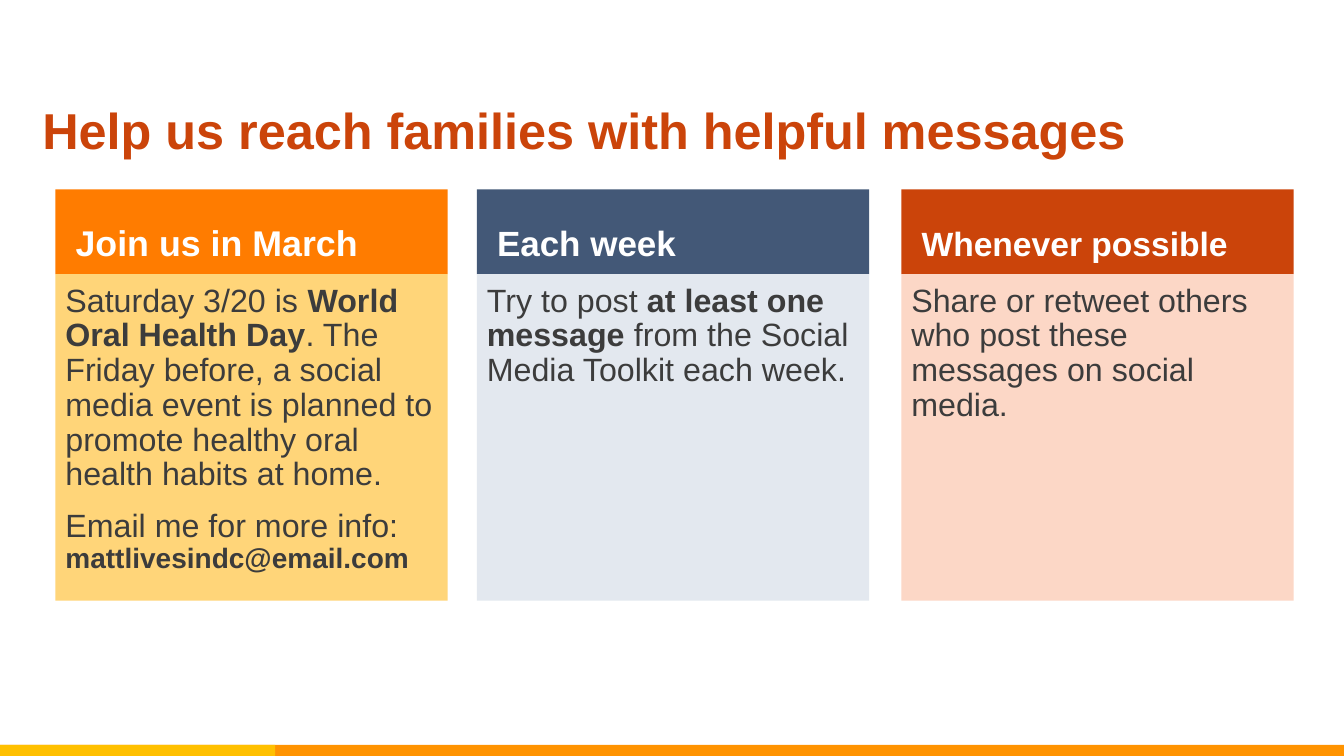
from pptx import Presentation
from pptx import util as u
from pptx.dml.color import RGBColor
from pptx.enum import shapes, text

PX = 9144
PAGE_WIDTH, PAGE_HEIGHT = 1333, 750
CARD_TOP, CARD_WIDTH, CARD_HEIGHT, HEADER_HEIGHT = 188, 389, 408, 84
RUST, WHITE, CHARCOAL = "CB440A", "FFFFFF", "3C3C3C"

CARDS = [
    (55, "Join us in March", 25.5, "FF7C00", "FFD579", [
        [("Saturday 3/20 is ", False, 23), ("World Oral Health Day", True, 23),
         (". The Friday before, a social media event is planned to promote "
          "healthy oral health habits at home.", False, 23)],
        [("Email me for more info: ", False, 23),
         ("mattlivesindc@email.com", True, 20)],
    ]),
    (473, "Each week", 25, "435877", "E3E8EF", [
        [("Try to post ", False, 23), ("at least one message", True, 23),
         (" from the Social Media Toolkit each week.", False, 23)],
    ]),
    (894, "Whenever possible", 24, RUST, "FCD7C6", [
        [("Share or retweet others who post these messages on social media.",
          False, 23)],
    ]),
]


def color(value):
    """Turn a hex string into a colour."""
    return RGBColor.from_string(value)


def add_block(page, left, top, width, height, fill):
    """Add a plain filled rectangle."""
    block = page.shapes.add_shape(
        shapes.MSO_SHAPE.RECTANGLE, left * PX, top * PX, width * PX, height * PX)
    block.shadow.inherit = False
    block.fill.solid()
    block.fill.fore_color.rgb = color(fill)
    block.line.fill.background()
    return block


def write(box, paragraphs, ink, insets, anchor):
    """Fill a box with paragraphs of (text, bold, size) spans."""
    frame = box.text_frame
    frame.word_wrap = True
    frame.vertical_anchor = anchor
    (frame.margin_left, frame.margin_top,
     frame.margin_right, frame.margin_bottom) = [inset * PX for inset in insets]
    for index, spans in enumerate(paragraphs):
        para = frame.add_paragraph() if index else frame.paragraphs[0]
        para.alignment = text.PP_ALIGN.LEFT
        para.line_spacing = 0.9
        if index < len(paragraphs) - 1:
            para.space_after = u.Pt(12)
        para.font.name = "Arial"
        para.font.color.rgb = color(ink)
        uniform = len({span[1:] for span in spans}) == 1
        for words, bold, size in spans:
            span = para.add_run()
            span.text = words
            font = para.font if uniform else span.font
            font.bold = bold
            font.size = u.Pt(size)


def add_title(page, left, top, width, height):
    """Place the slide title."""
    box = page.shapes.add_textbox(left * PX, top * PX, width * PX, height * PX)
    write(box, [[("Help us reach families with helpful messages", True, 36)]],
          RUST, (0, 0, 0, 0), text.MSO_ANCHOR.TOP)


def add_card(page, left, top, width, height, card):
    """Place a card with a coloured header above its body."""
    heading, size, header_fill, body_fill, paragraphs = card
    header = add_block(page, left, top, width, HEADER_HEIGHT, header_fill)
    write(header, [[(heading, True, size)]], WHITE, (20, 5, 10, 10),
          text.MSO_ANCHOR.BOTTOM)
    body = add_block(page, left, top + HEADER_HEIGHT, width,
                     height - HEADER_HEIGHT, body_fill)
    write(body, paragraphs, CHARCOAL, (10, 10, 10, 5), text.MSO_ANCHOR.TOP)


def add_footer(page, left, top, width, height):
    """Place the two-tone strip at the foot of the slide."""
    add_block(page, left, top, width, height, "FF9300")
    add_block(page, left, top, 273, height, "FFC000")


def main():
    """Build and save the slide."""
    deck = Presentation()
    deck.slide_width, deck.slide_height = PAGE_WIDTH * PX, PAGE_HEIGHT * PX
    page = deck.slides.add_slide(deck.slide_layouts[6])
    add_footer(page, 0, 739, PAGE_WIDTH, PAGE_HEIGHT - 739)
    for left, *card in CARDS:
        add_card(page, left, CARD_TOP, CARD_WIDTH, CARD_HEIGHT, card)
    add_title(page, 42, 105, 1083, 55)
    deck.save("out.pptx")


if __name__ == "__main__":
    main()
